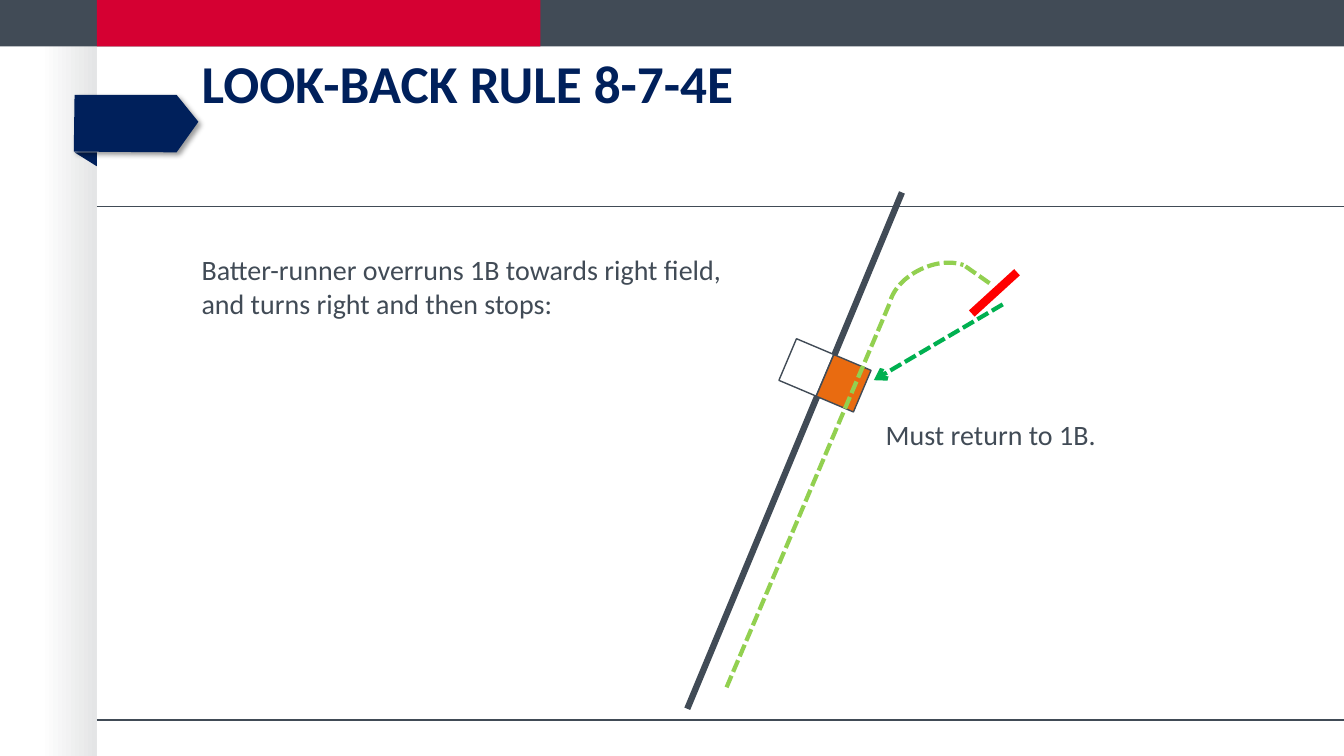
"""Build the look-back rule slide with its first-base diagram."""
from dataclasses import dataclass

from lxml import etree
from pptx import Presentation
from pptx import util as u
from pptx.dml.color import RGBColor
from pptx.enum import dml, shapes, text
from pptx.oxml import parse_xml
from pptx.oxml.ns import nsdecls, qn


@dataclass(frozen=True)
class Theme:
    slate: str = "414B56"
    navy: str = "00205B"
    crimson: str = "D50032"
    white: str = "FFFFFF"
    mist: str = "E4E5E6"
    orange: str = "E96B10"
    lime: str = "92D050"
    green: str = "00B050"
    red: str = "FF0000"
    font: str = "Calibri"
    title_size: int = 38
    body_size: int = 20


theme = Theme()
deck = Presentation()
deck.slide_width, deck.slide_height = u.Cm(33.87), u.Cm(19.05)
page = deck.slides.add_slide(deck.slide_layouts[5])


def paint(shape, fill=None, line=None, width=1, dashed=False):
    shape.shadow.inherit = False
    if fill:
        shape.fill.solid()
        shape.fill.fore_color.rgb = RGBColor.from_string(fill)
    else:
        shape.fill.background()
    if line:
        shape.line.color.rgb = RGBColor.from_string(line)
        shape.line.width = u.Pt(width)
        if dashed:
            shape.line.dash_style = dml.MSO_LINE.SQUARE_DOT
    else:
        shape.line.fill.background()


def draw_line(start, end, color, width, dashed=False):
    line = page.shapes.add_connector(
        shapes.MSO_CONNECTOR.STRAIGHT, *(u.Cm(value) for value in start + end))
    line.line.color.rgb = RGBColor.from_string(color)
    line.line.width = u.Pt(width)
    if dashed:
        line.line.dash_style = dml.MSO_LINE.SQUARE_DOT
    etree.SubElement(line._element.spPr, qn("a:effectLst"))
    return line


band = page.shapes.add_shape(
    shapes.MSO_SHAPE.RECTANGLE, u.Cm(1.02), u.Cm(1.14), u.Cm(1.42), u.Cm(17.91))
paint(band)
band.fill.gradient()
band.fill.gradient_angle = 0
for stop, color in zip(band.fill.gradient_stops, (theme.white, theme.mist)):
    stop.color.rgb = RGBColor.from_string(color)

for left, width, color in ((0, 33.87, theme.slate), (2.44, 11.18, theme.crimson)):
    bar = page.shapes.add_shape(
        shapes.MSO_SHAPE.RECTANGLE, u.Cm(left), 0, u.Cm(width), u.Cm(1.17))
    paint(bar, color)

for top in (5.21, 18.14):
    draw_line((2.44, top), (33.87, top), theme.slate, 1)

fold = [(1.88, 3.84), (2.44, 3.84), (2.44, 4.19)]
tag = [(1.88, 2.39), (1.86, 3.82), (4.45, 3.84), (5, 3.07), (4.45, 2.39)]
for outline in (fold, tag):
    points = [(u.Cm(x), u.Cm(y)) for x, y in outline]
    builder = page.shapes.build_freeform(*points[0])
    builder.add_line_segments(points[1:], close=True)
    ribbon = builder.convert_to_shape()
    paint(ribbon, theme.navy)
ribbon._element.spPr.find(qn("a:effectLst")).append(parse_xml(
    f'<a:outerShdw {nsdecls("a")} blurRad="50800" dist="38100" dir="2700000">'
    '<a:srgbClr val="000000"><a:alpha val="40000"/></a:srgbClr></a:outerShdw>'))

title = page.shapes.title
title.left, title.top, title.width, title.height = (
    u.Cm(value) for value in (4.83, 0.48, 24.33, 3.45))
title.text_frame.text = "LOOK-BACK RULE 8-7-4E"
title.text_frame.vertical_anchor = text.MSO_ANCHOR.MIDDLE
heading = title.text_frame.paragraphs[0]
heading.alignment = text.PP_ALIGN.LEFT
heading.line_spacing = u.Pt(theme.title_size)
heading.font.name = theme.font
heading.font.size = u.Pt(theme.title_size)
heading.font.bold = True
heading.font.color.rgb = RGBColor.from_string(theme.navy)

draw_line((17.32, 17.86), (22.73, 4.85), theme.slate, 4.5)
for left, top, color in ((19.81, 8.69, theme.white), (20.75, 9.09, theme.orange)):
    base = page.shapes.add_shape(
        shapes.MSO_SHAPE.RECTANGLE, u.Cm(left), u.Cm(top), u.Cm(1.02), u.Cm(1.14))
    base.rotation = 22.9
    paint(base, color, theme.slate)
draw_line((18.31, 17.32), (22.43, 7.62), theme.lime, 3, dashed=True)

notes = (
    (22.07, 10.39, 5.87, 1.12, ["Must return to 1B."]),
    (4.83, 6.25, 13.74, 1.96, ["Batter-runner overruns 1B towards right field,",
                               "and turns right and then stops:"]),
)
for left, top, width, height, lines in notes:
    box = page.shapes.add_textbox(u.Cm(left), u.Cm(top), u.Cm(width), u.Cm(height))
    frame = box.text_frame
    frame.word_wrap = False
    frame.auto_size = text.MSO_AUTO_SIZE.SHAPE_TO_FIT_TEXT
    frame.text = "\n".join(lines)
    for para in frame.paragraphs:
        para.font.name = theme.font
        para.font.size = u.Pt(theme.body_size)
        para.font.color.rgb = RGBColor.from_string(theme.slate)

draw_line((24.49, 7.9), (25.63, 6.86), theme.red, 6)

turn_controls = ((22.45, 7.54), (22.68, 6.91), (23.62, 6.45), (24.28, 6.68))
turn_steps = 24
turn = []
for step in range(turn_steps + 1):
    t = step / turn_steps
    weights = ((1 - t) ** 3, 3 * t * (1 - t) ** 2, 3 * t ** 2 * (1 - t), t ** 3)
    turn.append(tuple(
        u.Cm(sum(weight * value for weight, value in zip(weights, axis)))
        for axis in zip(*turn_controls)))
builder = page.shapes.build_freeform(*turn[0])
builder.add_line_segments(turn[1:], close=False)
paint(builder.convert_to_shape(), line=theme.lime, width=3, dashed=True)

draw_line((24.33, 6.71), (24.97, 7.16), theme.lime, 3, dashed=True)
way_back = draw_line((25.27, 7.67), (22.02, 9.58), theme.green, 3, dashed=True)
etree.SubElement(way_back.line._get_or_add_ln(), qn("a:tailEnd"), type="arrow")

deck.save("out.pptx")
